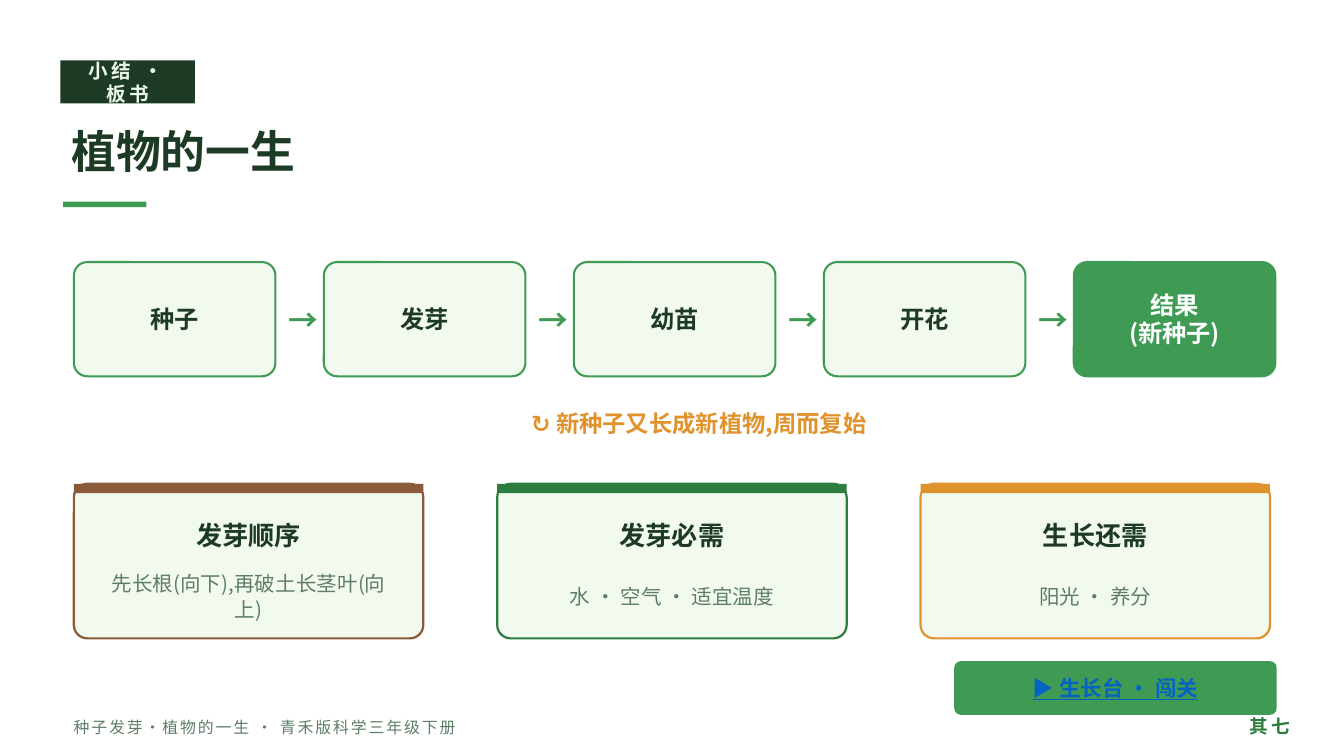
from dataclasses import dataclass

from lxml import etree
from pptx import Presentation
from pptx.dml.color import RGBColor
from pptx.enum import shapes, text
from pptx.oxml import ns
from pptx.util import Pt


@dataclass(frozen=True)
class Theme:
    font: str = "Noto Sans CJK SC"
    dark: str = "1D3A24"
    green: str = "3F9B54"
    deep_green: str = "2E7D40"
    brown: str = "8A5A3B"
    orange: str = "E0922C"
    pale: str = "F2FAEF"
    tag_text: str = "EAF5EC"
    muted: str = "5E7D66"
    link: str = "0563C1"
    white: str = "FFFFFF"
    title: float = 24
    arrow: float = 16
    card_title: float = 14
    stage: float = 13
    cycle: float = 12.5
    button: float = 11.5
    body: float = 11
    tag: float = 10.5
    page: float = 10
    footer: float = 8.5


THEME = Theme()
RECTANGLE = shapes.MSO_SHAPE.RECTANGLE
ROUNDED = shapes.MSO_SHAPE.ROUNDED_RECTANGLE
CENTER = text.PP_ALIGN.CENTER
LEFT = text.PP_ALIGN.LEFT
RIGHT = text.PP_ALIGN.RIGHT


def write(shape, words, *, size, color, bold=True, underline=None, align=CENTER,
          line_height=None, tracking=None):
    """Fill a shape with text, one paragraph per line; tracking is in points."""
    frame = shape.text_frame
    frame.word_wrap = True
    frame.auto_size = text.MSO_AUTO_SIZE.NONE
    frame.vertical_anchor = text.MSO_ANCHOR.MIDDLE
    frame.text = words
    for paragraph in frame.paragraphs:
        paragraph.alignment = align
        if line_height:
            paragraph.line_spacing = Pt(line_height)
        for run in paragraph.runs:
            font = run.font
            font.name = THEME.font
            font.size = Pt(size)
            font.bold = bold
            font.underline = underline
            font.color.rgb = RGBColor.from_string(color)
            properties = run._r.get_or_add_rPr()
            etree.SubElement(properties, ns.qn("a:ea"), typeface=THEME.font)
            if tracking:
                properties.set("spc", str(int(tracking * 100)))


def place(shape, left, top, width, height):
    shape.left, shape.top = Pt(left), Pt(top)
    shape.width, shape.height = Pt(width), Pt(height)


def add_label(slide, box, words, **format):
    label = slide.shapes.add_textbox(*map(Pt, box))
    write(label, words, **format)


def add_block(slide, kind, box, fill, line=None, line_width=1, radius=None):
    """Add a filled shape; radius is the corner size in points."""
    block = slide.shapes.add_shape(kind, *map(Pt, box))
    block.shadow.inherit = False
    block.fill.solid()
    block.fill.fore_color.rgb = RGBColor.from_string(fill)
    if line:
        block.line.color.rgb = RGBColor.from_string(line)
        block.line.width = Pt(line_width)
    else:
        block.line.fill.background()
    if radius:
        block.adjustments[0] = radius / min(box[2:])
    return block


def add_heading(slide):
    tag = add_block(slide, RECTANGLE, (32.4, 32.4, 72, 23), THEME.dark)
    write(tag, "小结 · 板书", size=THEME.tag, color=THEME.tag_text, tracking=2)
    title = slide.shapes.title
    place(title, 31, 59, 648, 43.2)
    write(title, "植物的一生", size=THEME.title, color=THEME.dark, align=LEFT)
    add_block(slide, RECTANGLE, (33.8, 108, 44.6, 3), THEME.green)


def add_life_cycle(slide, stages):
    left, top, width, height, gap = 39.6, 140.4, 108, 61.2, 25.92
    last = len(stages) - 1
    for index, stage in enumerate(stages):
        x = left + index * (width + gap)
        fill, color = ((THEME.green, THEME.white) if index == last
                       else (THEME.pale, THEME.dark))
        block = add_block(slide, ROUNDED, (x, top, width, height), fill,
                          line=THEME.green, line_width=1.1, radius=7.2)
        write(block, stage, size=THEME.stage, color=color, line_height=15)
        if index < last:
            add_label(slide, (x + width, top, gap, height), "→",
                      size=THEME.arrow, color=THEME.green)
    add_label(slide, (left, 212.4, 669.6, 28.8), "↻ 新种子又长成新植物,周而复始",
              size=THEME.cycle, color=THEME.orange)


def add_card(slide, left, heading, body, accent):
    top, width, inset = 259.2, 187.2, 8.64
    add_block(slide, ROUNDED, (left, top, width, 82.8), THEME.pale,
              line=accent, line_width=1.2, radius=7.2)
    add_block(slide, RECTANGLE, (left, top, width, 5), accent)
    add_label(slide, (left, top + 13, width, 28.8), heading,
              size=THEME.card_title, color=THEME.dark)
    add_label(slide, (left + inset, top + 41.8, width - 2 * inset, 36), body,
              size=THEME.body, color=THEME.muted, bold=False, line_height=14)


def add_footer(slide):
    button = add_block(slide, ROUNDED, (511.2, 354.2, 172.8, 28.8),
                       THEME.green, radius=3.6)
    write(button, "▶ 生长台 · 闯关", size=THEME.button, color=THEME.link,
          underline=True)
    add_label(slide, (32.4, 378.7, 446.4, 21.6),
              "种子发芽·植物的一生 · 青禾版科学三年级下册", size=THEME.footer,
              color=THEME.muted, bold=False, align=LEFT, tracking=1)
    add_label(slide, (655.2, 377.3, 43.2, 23), "其 七", size=THEME.page,
              color=THEME.deep_green, align=RIGHT)


def main():
    presentation = Presentation()
    presentation.slide_width, presentation.slide_height = Pt(720), Pt(405)
    slide = presentation.slides.add_slide(presentation.slide_layouts[5])
    add_heading(slide)
    add_life_cycle(slide, ["种子", "发芽", "幼苗", "开花", "结果\n(新种子)"])
    cards = [
        ("发芽顺序", "先长根(向下),再破土长茎叶(向上)", THEME.brown),
        ("发芽必需", "水 · 空气 · 适宜温度", THEME.deep_green),
        ("生长还需", "阳光 · 养分", THEME.orange),
    ]
    for index, (heading, body, accent) in enumerate(cards):
        add_card(slide, 39.6 + index * 226.8, heading, body, accent)
    add_footer(slide)
    presentation.save("out.pptx")


if __name__ == "__main__":
    main()
